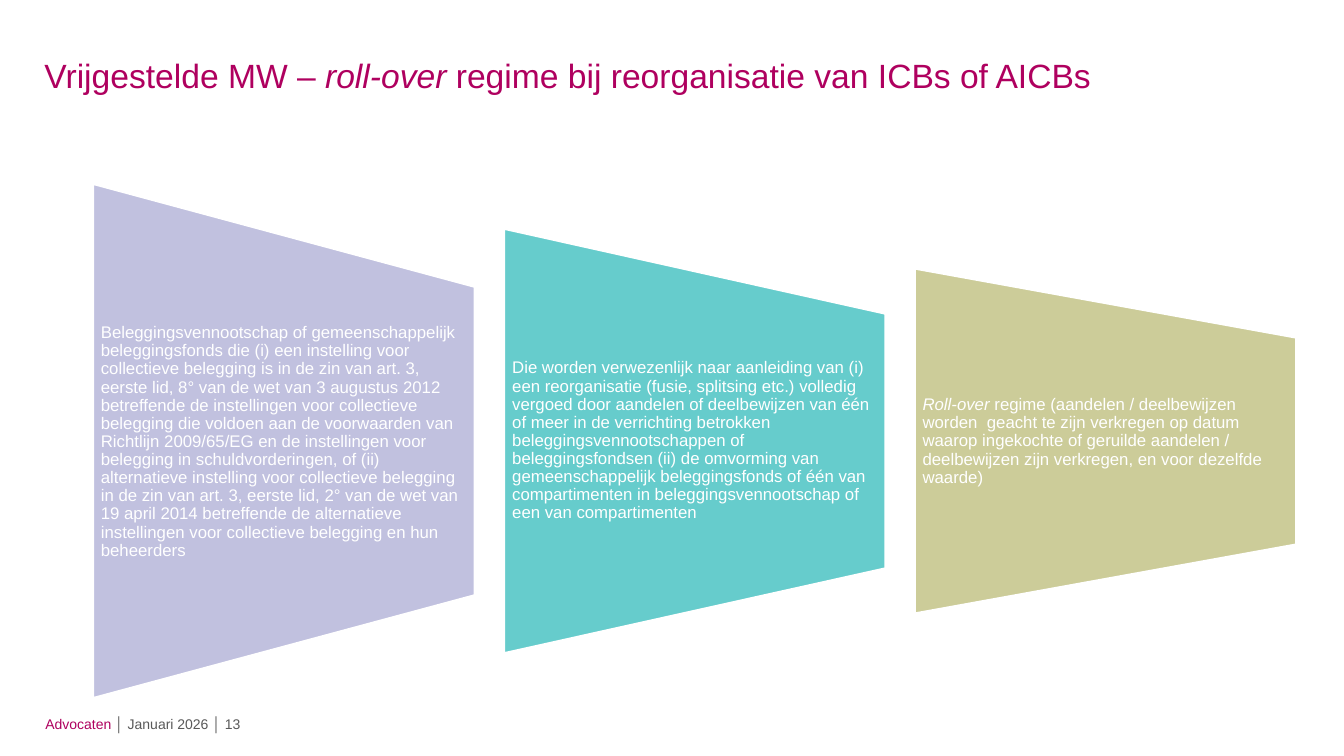
from pptx import Presentation
from pptx.dml.color import RGBColor
from pptx.enum.shapes import MSO_SHAPE
from pptx.enum.text import MSO_ANCHOR, MSO_AUTO_SIZE, PP_ALIGN
from pptx.util import Emu, Pt

# Content: each text is a list of (words, italic) or (words, colour)
TITLE = [
    ("Vrijgestelde MW – ", False),
    ("roll-over ", True),
    ("regime bij reorganisatie van ICBs of AICBs", False),
]
FOOTER = [("Advocaten ", "AF005F"), ("│ Januari 2026 │ 13", "595959")]
STEPS = [  # colour, height of the long left side, text
    ("C1C1DF", 511, [(
        "Beleggingsvennootschap of gemeenschappelijk beleggingsfonds die (i) een "
        "instelling voor collectieve belegging is in de zin van art. 3, eerste lid, "
        "8° van de wet van 3 augustus 2012 betreffende de instellingen voor "
        "collectieve belegging die voldoen aan de voorwaarden van Richtlijn "
        "2009/65/EG en de instellingen voor belegging in schuldvorderingen, of (ii) "
        "alternatieve instelling voor collectieve belegging in de zin van art. 3, "
        "eerste lid, 2° van de wet van 19 april 2014 betreffende de alternatieve "
        "instellingen voor collectieve belegging en hun beheerders", False)]),
    ("66CCCC", 422, [(
        "Die worden verwezenlijk naar aanleiding van (i) een reorganisatie (fusie, "
        "splitsing etc.) volledig vergoed door aandelen of deelbewijzen van één of "
        "meer in de verrichting betrokken beleggingsvennootschappen of "
        "beleggingsfondsen (ii) de omvorming van gemeenschappelijk beleggingsfonds "
        "of één van compartimenten in beleggingsvennootschap of een van "
        "compartimenten", False)]),
    ("CCCC99", 343, [
        ("Roll-over ", True),
        ("regime (aandelen / deelbewijzen worden  geacht te zijn verkregen op datum "
         "waarop ingekochte of geruilde aandelen / deelbewijzen zijn verkregen, en "
         "voor dezelfde waarde)", False)]),
]

# Layout in px, 100 to the inch
STEP_LEFT, STEP_WIDTH, STEP_PITCH, STEP_MIDDLE = 92, 379, 407.5, 438
TEXT_SHARE = 0.6  # the short side of a step, as a share of the long one


def px(length):
    return Emu(round(length) * 9144)


def colour(value):
    return RGBColor.from_string(value)


def place(shape, left, top, width, height):
    shape.left, shape.top = px(left), px(top)
    shape.width, shape.height = px(width), px(height)


def write(shape, parts, size, margins):
    """Fill a shape with one paragraph of (words, colour, italic) parts."""
    frame = shape.text_frame
    frame.word_wrap = True
    frame.auto_size = MSO_AUTO_SIZE.NONE
    frame.vertical_anchor = MSO_ANCHOR.MIDDLE
    (frame.margin_left, frame.margin_top,
     frame.margin_right, frame.margin_bottom) = map(px, margins)
    paragraph = frame.paragraphs[0]
    paragraph.alignment = PP_ALIGN.LEFT
    for words, hue, italic in parts:
        run = paragraph.add_run()
        run.text = words
        run.font.name, run.font.size = "Arial", Pt(size)
        run.font.color.rgb, run.font.italic = colour(hue), italic
    return paragraph


presentation = Presentation()
presentation.slide_width, presentation.slide_height = px(1333), px(750)
slide = presentation.slides.add_slide(presentation.slide_layouts[5])

# Title
title = slide.shapes.title
place(title, 44, 41, 1244, 66)
write(title, [(words, "AF005F", italic) for words, italic in TITLE], 24, (0, 5, 10, 5))

# Footer
footer = slide.shapes.add_textbox(px(45), px(705), px(339), px(22))
write(footer, [(words, hue, False) for words, hue in FOOTER], 10, (0, 5, 10, 0))

# Steps: trapezoids turned a quarter, each with upright text over it
for index, (fill, height, words_list) in enumerate(STEPS):
    left = STEP_LEFT + index * STEP_PITCH
    centre = left + STEP_WIDTH / 2
    step = slide.shapes.add_shape(
        MSO_SHAPE.FLOWCHART_MANUAL_OPERATION,
        px(centre - height / 2), px(STEP_MIDDLE - STEP_WIDTH / 2),
        px(height), px(STEP_WIDTH))
    step.rotation = 270
    step.shadow.inherit = False
    step.fill.solid()
    step.fill.fore_color.rgb = colour(fill)
    step.line.color.rgb = colour("FFFFFF")
    step.line.width = Pt(2)

    text_height = height * TEXT_SHARE
    label = slide.shapes.add_textbox(
        px(left), px(STEP_MIDDLE - text_height / 2), px(STEP_WIDTH), px(text_height))
    paragraph = write(
        label, [(words, "FFFFFF", italic) for words, italic in words_list],
        12, (8, 0, 8, 0))
    paragraph.line_spacing = 0.9

presentation.save("out.pptx")
